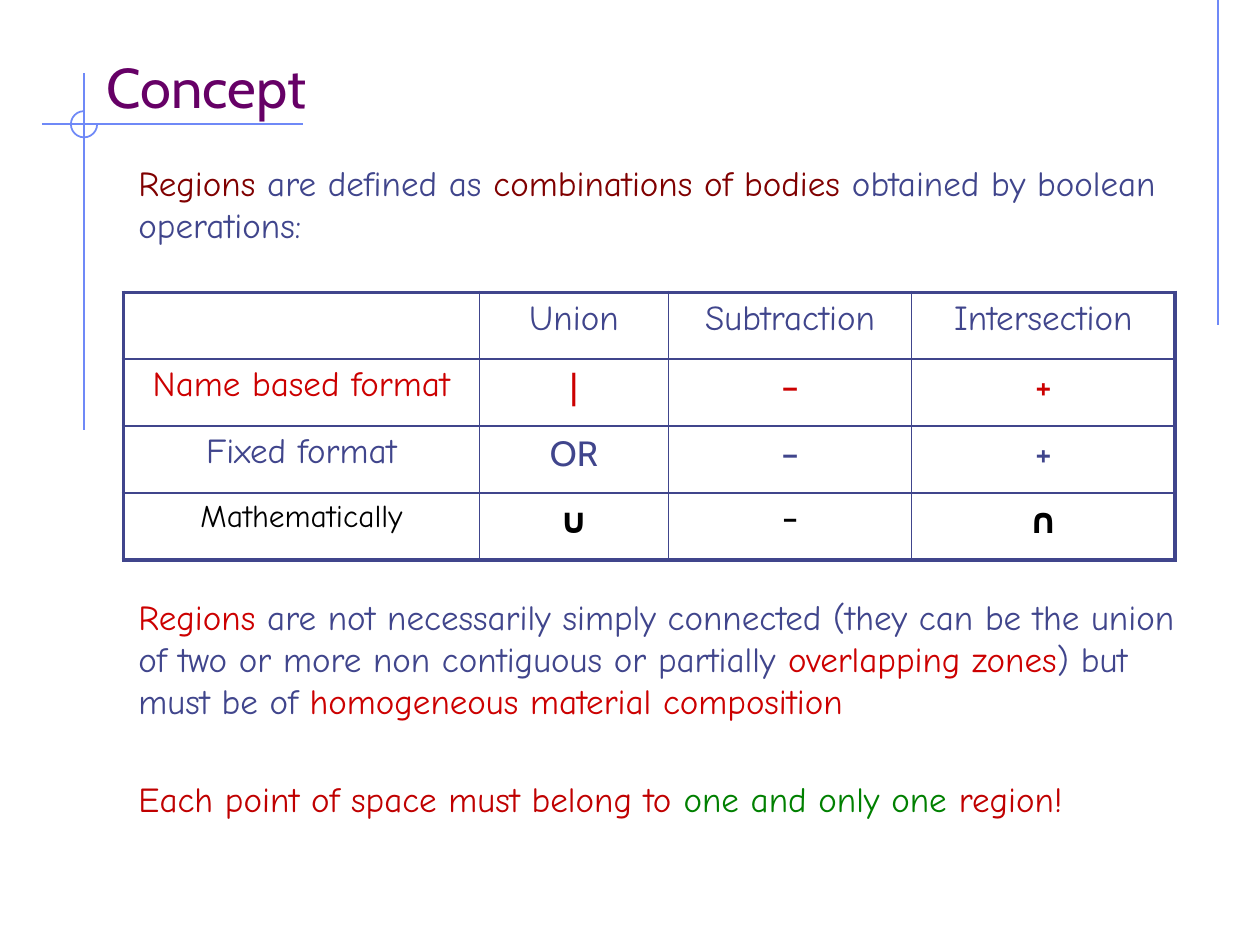
from lxml.etree import SubElement
from pptx import Presentation
from pptx.dml.color import RGBColor
from pptx.enum.shapes import MSO_CONNECTOR as Connector, MSO_SHAPE as Shape
from pptx.enum.text import MSO_ANCHOR as Anchor, PP_ALIGN as Align
from pptx.oxml import parse_xml
from pptx.oxml.ns import nsdecls, qn
from pptx.util import Pt

PURPLE = RGBColor(0x66, 0x00, 0x66)
SLATE = RGBColor(0x40, 0x45, 0x8C)
SKY = RGBColor(0x6F, 0x89, 0xF7)
MAROON = RGBColor(0x80, 0x00, 0x00)
RED = RGBColor(0xCC, 0x00, 0x00)
DARK_RED = RGBColor(0xC0, 0x00, 0x00)
GREEN = RGBColor(0x00, 0x80, 0x00)
BLACK = RGBColor(0x00, 0x00, 0x00)
HEADING_FONT, BODY_FONT = "Cabin", "Comic Neue"

# Space before each paragraph, then its coloured runs; the table fills the first gap
BODY = [
    (0, [("Regions", MAROON), (" are defined as ", SLATE),
         ("combinations of bodies", MAROON),
         (" obtained by boolean operations:", SLATE)]),
    (200, [("Regions", RED),
           (" are not necessarily simply connected (they can be the union of two"
            " or more non contiguous or partially ", SLATE),
           ("overlapping zones", RED), (") but must be of ", SLATE),
           ("homogeneous material composition", RED)]),
    (32, [("Each point of space must belong to ", DARK_RED),
          ("one and only one ", GREEN), ("region!", DARK_RED)]),
]
OPERATIONS = [
    ("", "Union", "Subtraction", "Intersection"),
    ("Name based format", "|", "–", "+"),
    ("Fixed format", "OR", "–", "+"),
    ("Mathematically", "∪", "–", "∩"),
]
ROW_COLORS = [SLATE, RED, SLATE, BLACK]
COLUMN_WIDTHS = [203.5, 108, 139, 150.5]


def style_font(font, size, name, color=None, bold=False):
    font.size, font.name, font.bold = Pt(size), name, bold
    if color is not None:
        font.color.rgb = color


def add_line(slide, x1, y1, x2, y2):
    line = slide.shapes.add_connector(
        Connector.STRAIGHT, Pt(x1), Pt(y1), Pt(x2), Pt(y2))
    line.line.color.rgb = SKY
    line.line.width = Pt(1)
    SubElement(line._element.spPr, qn("a:effectLst"))


def add_text_frame(slide, left, top, width, height):
    box = slide.shapes.add_textbox(Pt(left), Pt(top), Pt(width), Pt(height))
    box.text_frame.word_wrap = True
    return box.text_frame


def add_ornament(slide, left, top, width, height):
    """Crossing lines with a three-quarter ring around the crossing."""
    center_x, center_y, radius = left + 24, top + 29, 7.5
    add_line(slide, left, center_y, left + width, center_y)
    add_line(slide, center_x, top, center_x, top + height)
    ring = slide.shapes.add_shape(
        Shape.ARC, Pt(center_x - radius), Pt(center_y - radius),
        Pt(2 * radius), Pt(2 * radius))
    ring.adjustments[0], ring.adjustments[1] = 0, 162
    ring.shadow.inherit = False
    ring.fill.background()
    ring.line.color.rgb = SKY
    ring.line.width = Pt(1)


def add_title(slide, left, top, width, height):
    frame = add_text_frame(slide, left, top, width, height)
    frame.vertical_anchor = Anchor.BOTTOM
    paragraph = frame.paragraphs[0]
    paragraph.text = "Concept"
    style_font(paragraph.font, 32, HEADING_FONT, PURPLE)


def add_body(slide, left, top, width, height):
    frame = add_text_frame(slide, left, top, width, height)
    for index, (space, runs) in enumerate(BODY):
        paragraph = frame.add_paragraph() if index else frame.paragraphs[0]
        paragraph.space_before = Pt(space)
        style_font(paragraph.font, 20, BODY_FONT)
        for text, color in runs:
            run = paragraph.add_run()
            run.text = text
            run.font.color.rgb = color


def set_borders(cell, widths):
    """Draw the left, right, top and bottom borders, in that order."""
    properties = cell._tc.get_or_add_tcPr()
    for index, (side, width) in enumerate(zip("LRTB", widths)):
        properties.insert(index, parse_xml(
            f'<a:ln{side} {nsdecls("a")} w="{Pt(width)}"><a:solidFill>'
            f'<a:srgbClr val="{SLATE}"/></a:solidFill></a:ln{side}>'))


def add_operations_table(slide, left, top, width, height):
    row_count, column_count = len(OPERATIONS), len(COLUMN_WIDTHS)
    table = slide.shapes.add_table(
        row_count, column_count, Pt(left), Pt(top), Pt(width), Pt(height)).table
    table.first_row = table.horz_banding = False
    for column, column_width in zip(table.columns, COLUMN_WIDTHS):
        column.width = Pt(column_width)
    for r, values in enumerate(OPERATIONS):
        table.rows[r].height = Pt(height / row_count)
        for c, value in enumerate(values):
            cell = table.cell(r, c)
            cell.fill.background()
            outer = (c == 0, c == column_count - 1, r == 0, r == row_count - 1)
            set_borders(cell, [2.25 if edge else 1 for edge in outer])
            paragraph = cell.text_frame.paragraphs[0]
            paragraph.text = value
            paragraph.alignment = Align.CENTER
            last_row, is_label = r == row_count - 1, r == 0 or c == 0
            style_font(paragraph.font,
                       18 if last_row and value in ("Mathematically", "–") else 20,
                       BODY_FONT if is_label else HEADING_FONT,
                       ROW_COLORS[r], bold=last_row and not is_label)


def main():
    presentation = Presentation()
    presentation.slide_width, presentation.slide_height = Pt(720), Pt(540)
    slide = presentation.slides.add_slide(presentation.slide_layouts[6])

    # Decoration
    add_line(slide, 696, 0, 696, 186)
    add_ornament(slide, 24, 42, 149, 204)

    # Content
    add_title(slide, 54, 24, 612, 48)
    add_body(slide, 72, 88.5, 616, 408)
    add_operations_table(slide, 70.5, 167, 601, 153)

    presentation.save("out.pptx")


if __name__ == "__main__":
    main()
